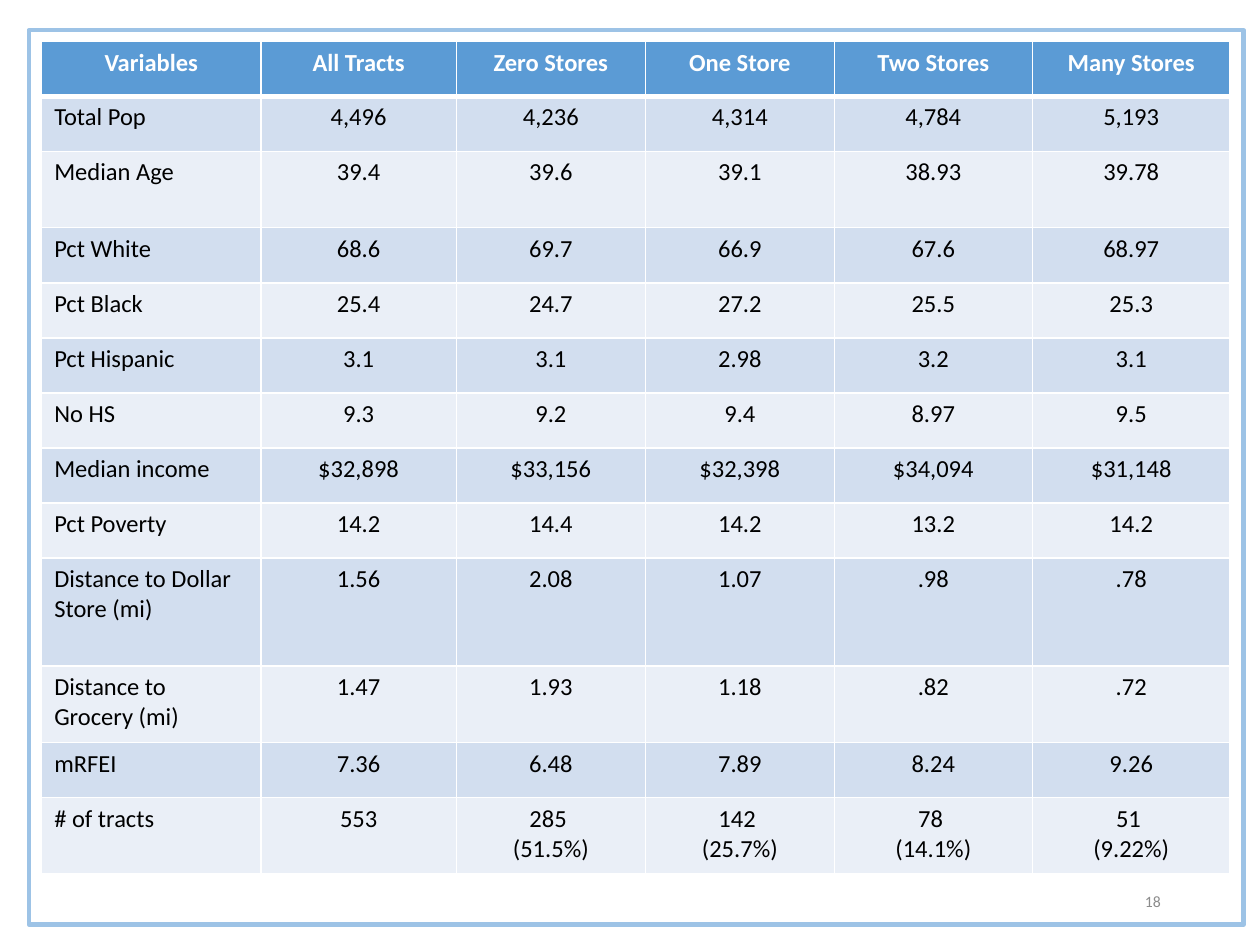
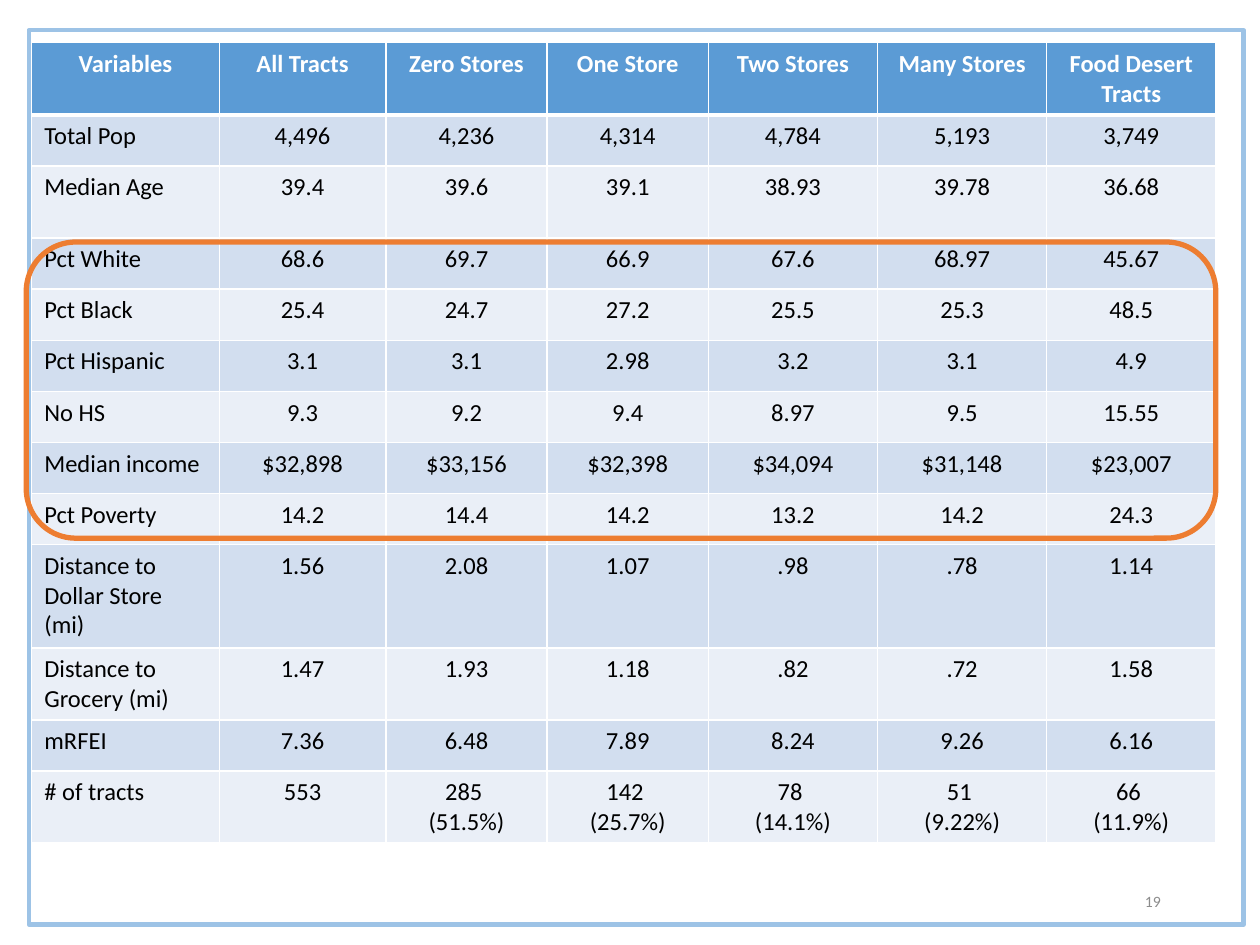
"""Build two slides that compare census tracts by number of stores."""
from dataclasses import dataclass

from lxml import etree
from pptx import Presentation
from pptx import util as u
from pptx.dml import color
from pptx.enum import shapes, text
from pptx.oxml import ns

FONT = "Calibri"
COLORS = {
    "header": "5B9BD5",
    "band_dark": "D2DEEF",
    "band_light": "EAEFF7",
    "frame": "9DC3E6",
    "highlight": "ED7D31",
    "number": "8C8C8C",
    "white": "FFFFFF",
    "black": "000000",
}
ROWS = [
    ["Variables", "All Tracts", "Zero Stores", "One Store", "Two Stores", "Many Stores",
     "Food Desert Tracts"],
    ["Total Pop", "4,496", "4,236", "4,314", "4,784", "5,193", "3,749"],
    ["Median Age", "39.4", "39.6", "39.1", "38.93", "39.78", "36.68"],
    ["Pct White", "68.6", "69.7", "66.9", "67.6", "68.97", "45.67"],
    ["Pct Black", "25.4", "24.7", "27.2", "25.5", "25.3", "48.5"],
    ["Pct Hispanic", "3.1", "3.1", "2.98", "3.2", "3.1", "4.9"],
    ["No HS", "9.3", "9.2", "9.4", "8.97", "9.5", "15.55"],
    ["Median income", "$32,898", "$33,156", "$32,398", "$34,094", "$31,148", "$23,007"],
    ["Pct Poverty", "14.2", "14.4", "14.2", "13.2", "14.2", "24.3"],
    ["Distance to Dollar Store (mi)", "1.56", "2.08", "1.07", ".98", ".78", "1.14"],
    ["Distance to Grocery (mi)", "1.47", "1.93", "1.18", ".82", ".72", "1.58"],
    ["mRFEI", "7.36", "6.48", "7.89", "8.24", "9.26", "6.16"],
    ["# of tracts", "553", "285 \n(51.5%)", "142 \n(25.7%)", "78 \n(14.1%)",
     "51 \n(9.22%)", "66 \n(11.9%)"],
]


@dataclass
class TractTable:
    """Placement and grid of a tract table, in centimetres."""
    left: float
    top: float
    widths: list[float]
    header: float
    single: float
    double: float
    triple: float

    def heights(self) -> list[float]:
        """Return the row heights from the header down."""
        special = {0: self.header, 2: self.double, 9: self.triple,
                   10: self.double, 12: self.double}
        return [special.get(i, self.single) for i in range(len(ROWS))]


@dataclass
class Outline:
    """An unfilled outline shape, in centimetres and points."""
    kind: shapes.MSO_SHAPE
    left: float
    top: float
    width: float
    height: float
    color: str
    weight: float


@dataclass
class TractSlide:
    """Everything that differs between the slides."""
    number: int
    table: TractTable
    outlines: list[Outline]


FRAME = Outline(shapes.MSO_SHAPE.RECTANGLE, 0.58, 0.61, 24.49, 18.03, "frame", 2.5)
HIGHLIGHT = Outline(shapes.MSO_SHAPE.ROUNDED_RECTANGLE, 0.53, 4.88, 23.98, 5.97,
                    "highlight", 3)
SLIDES = [
    TractSlide(18, TractTable(0.84, 0.84, [4.42, 3.94, 3.81, 3.81, 3.99, 3.99],
                              1.1, 1.11, 1.54, 2.18), [FRAME]),
    TractSlide(19, TractTable(0.64, 0.86, [3.78, 3.36, 3.25, 3.25, 3.41, 3.41, 3.41],
                              1.46, 1.03, 1.45, 2.08), [FRAME, HIGHLIGHT]),
]


def rgb(name: str) -> color.RGBColor:
    """Look up a named colour."""
    return color.RGBColor.from_string(COLORS[name])


def add_text(p, words: str, size: float, ink: str, align, bold: bool = False) -> None:
    """Add one styled run to a paragraph."""
    p.alignment = align
    r = p.add_run()
    r.text = words
    r.font.name, r.font.size, r.font.bold = FONT, u.Pt(size), bold
    r.font.color.rgb = rgb(ink)


def set_borders(cell, row: int) -> None:
    """Draw white cell borders, thicker below the header."""
    tc_pr = cell._tc.get_or_add_tcPr()
    for side in "LRTB":
        thick = (row, side) in ((0, "B"), (1, "T"))
        ln = etree.SubElement(tc_pr, ns.qn(f"a:ln{side}"), w=str(u.Pt(3 if thick else 1)))
        fill = etree.SubElement(ln, ns.qn("a:solidFill"))
        etree.SubElement(fill, ns.qn("a:srgbClr"), val=COLORS["white"])


def fill_cell(cell, row: int, col: int, words: str) -> None:
    """Write and style one table cell."""
    is_header = row == 0
    set_borders(cell, row)
    cell.fill.solid()
    band = "band_dark" if row % 2 else "band_light"
    cell.fill.fore_color.rgb = rgb("header" if is_header else band)
    align = text.PP_ALIGN.CENTER if is_header or col else text.PP_ALIGN.LEFT
    tf = cell.text_frame
    for i, line in enumerate(words.split("\n")):
        p = tf.add_paragraph() if i else tf.paragraphs[0]
        add_text(p, line, 14, "white" if is_header else "black", align, is_header)


def add_tract_table(s, spec_: TractTable) -> None:
    """Add the table, with as many columns as it has widths."""
    heights = spec_.heights()
    table = s.shapes.add_table(
        len(ROWS), len(spec_.widths), u.Cm(spec_.left), u.Cm(spec_.top),
        u.Cm(sum(spec_.widths)), u.Cm(sum(heights))).table
    table.horz_banding = False
    for column, width in zip(table.columns, spec_.widths):
        column.width = u.Cm(width)
    for i, (row, height) in enumerate(zip(table.rows, heights)):
        row.height = u.Cm(height)
        for j, cell in enumerate(row.cells):
            fill_cell(cell, i, j, ROWS[i][j])


def add_outline(s, o: Outline) -> None:
    """Add an unfilled shape."""
    sp = s.shapes.add_shape(o.kind, u.Cm(o.left), u.Cm(o.top), u.Cm(o.width), u.Cm(o.height))
    sp.shadow.inherit = False
    sp.fill.background()
    sp.line.color.rgb = rgb(o.color)
    sp.line.width = u.Pt(o.weight)


def add_number(s, number: int) -> None:
    """Add the slide number at the bottom right."""
    tf = s.shapes.add_textbox(u.Cm(17.93), u.Cm(17.65), u.Cm(5.72), u.Cm(1.02)).text_frame
    tf.word_wrap = True
    tf.vertical_anchor = text.MSO_ANCHOR.MIDDLE
    add_text(tf.paragraphs[0], str(number), 9, "number", text.PP_ALIGN.RIGHT)


def main() -> None:
    """Build and save the presentation."""
    prs = Presentation()
    prs.slide_width, prs.slide_height = u.Cm(25.4), u.Cm(19.05)
    for page in SLIDES:
        s = prs.slides.add_slide(prs.slide_layouts[6])
        add_number(s, page.number)
        add_tract_table(s, page.table)
        for o in page.outlines:
            add_outline(s, o)
    prs.save("out.pptx")


if __name__ == "__main__":
    main()
